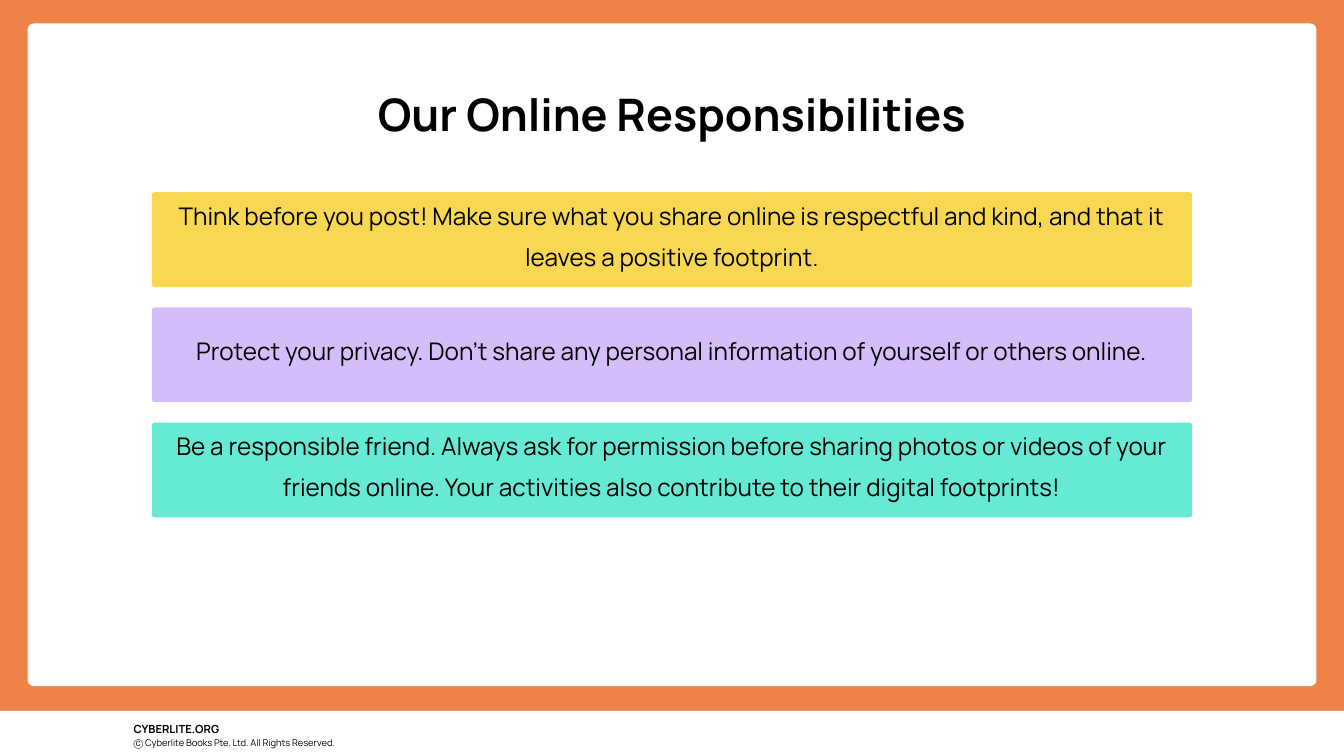
from dataclasses import dataclass

from pptx import Presentation
from pptx.dml.color import RGBColor
from pptx.enum.shapes import MSO_SHAPE
from pptx.enum.text import MSO_ANCHOR, PP_ALIGN
from pptx.util import Inches, Pt

FONT = "Manrope"
WHITE, BLACK, ORANGE = "FFFFFF", "000000", "EF8247"
BAR_LEFT, BAR_TOP, BAR_WIDTH, BAR_HEIGHT = 2.26, 2.86, 15.48, 1.41
BAR_PITCH = 1.715
TEXT_RISE = 0.28  # the text area starts this far above its bar


@dataclass
class Frame:
    left: float
    top: float
    width: float
    height: float

    def lengths(self):
        return [Inches(n) for n in (self.left, self.top, self.width, self.height)]


@dataclass
class Responsibility:
    text: str
    color: str


RESPONSIBILITIES = [
    Responsibility("Think before you post! Make sure what you share online is respectful "
                   "and kind, and that it leaves a positive footprint.", "F8D853"),
    Responsibility("Protect your privacy. Don’t share any personal information of "
                   "yourself or others online.", "D4BEFA"),
    Responsibility("Be a responsible friend. Always ask for permission before sharing "
                   "photos or videos of your friends online. Your activities also "
                   "contribute to their digital footprints!", "67EAD4"),
]


def paint(fill, color: str) -> None:
    fill.solid()
    fill.fore_color.rgb = RGBColor.from_string(color)


def add_block(slide, frame: Frame, color: str, radius: float = 0) -> None:
    """Draw a filled rectangle, rounded when a corner radius in inches is given."""
    kind = MSO_SHAPE.ROUNDED_RECTANGLE if radius else MSO_SHAPE.RECTANGLE
    block = slide.shapes.add_shape(kind, *frame.lengths())
    if radius:
        block.adjustments[0] = radius / min(frame.width, frame.height)
    block.shadow.inherit = False
    block.line.fill.background()
    paint(block.fill, color)


def add_text(slide, frame: Frame, text: str, size: float, bold: bool = False,
             align=PP_ALIGN.LEFT, anchor=MSO_ANCHOR.TOP, inset: float = 0) -> None:
    text_frame = slide.shapes.add_textbox(*frame.lengths()).text_frame
    text_frame.word_wrap = True
    text_frame.vertical_anchor = anchor
    text_frame.margin_left = text_frame.margin_right = Inches(inset)
    text_frame.margin_top = text_frame.margin_bottom = Inches(inset)
    para = text_frame.paragraphs[0]
    para.text = text
    para.alignment = align
    para.line_spacing = 1.4
    para.font.name = FONT
    para.font.size = Pt(size)
    para.font.bold = bold
    para.font.color.rgb = RGBColor.from_string(BLACK)


def add_footer(slide) -> None:
    add_block(slide, Frame(0, 10.58, 20, 0.67), WHITE)
    add_text(slide, Frame(1.99, 10.67, 1.43, 0.2), "CYBERLITE.ORG", 12, bold=True)
    add_text(slide, Frame(1.99, 10.9, 4.63, 0.17),
             "Ⓒ Cyberlite Books Pte. Ltd. All Rights Reserved.", 10)


def add_responsibility(slide, item: Responsibility, top: float) -> None:
    add_block(slide, Frame(BAR_LEFT, top, BAR_WIDTH, BAR_HEIGHT), item.color, radius=0.04)
    add_text(slide, Frame(BAR_LEFT, top - TEXT_RISE, BAR_WIDTH, BAR_HEIGHT + TEXT_RISE),
             item.text, 26, align=PP_ALIGN.CENTER, anchor=MSO_ANCHOR.MIDDLE, inset=0.06)


def main() -> None:
    deck = Presentation()
    deck.slide_width, deck.slide_height = Inches(20), Inches(11.25)
    slide = deck.slides.add_slide(deck.slide_layouts[6])
    paint(slide.background.fill, ORANGE)

    add_footer(slide)
    add_block(slide, Frame(0.41, 0.35, 19.18, 9.86), WHITE, radius=0.09)
    add_text(slide, Frame(2.04, 0.97, 15.92, 0.95), "Our Online Responsibilities", 48,
             bold=True, align=PP_ALIGN.CENTER)
    for index, item in enumerate(RESPONSIBILITIES):
        add_responsibility(slide, item, BAR_TOP + index * BAR_PITCH)

    deck.save("out.pptx")


if __name__ == "__main__":
    main()
